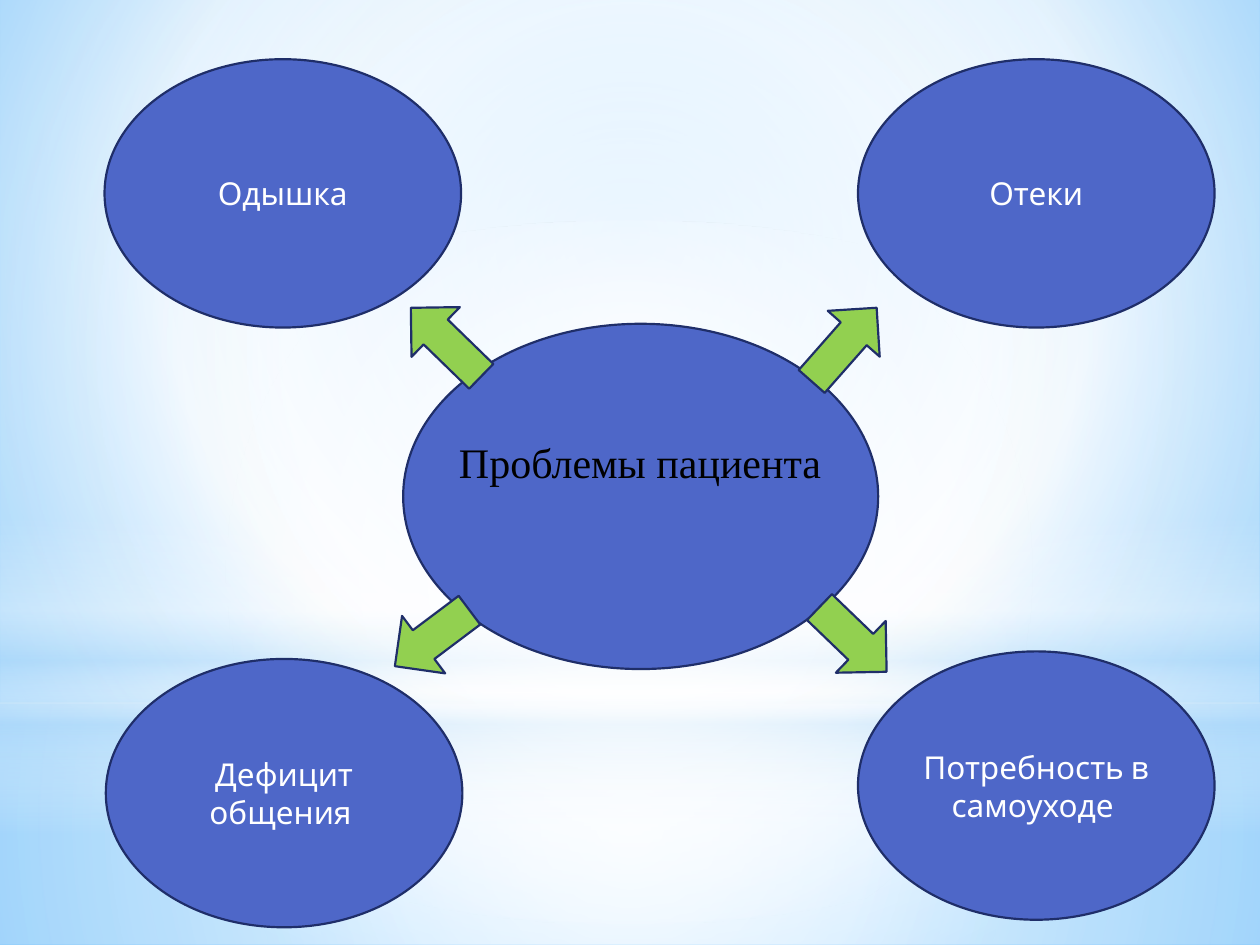
from typing import NamedTuple

from lxml.etree import SubElement
from pptx import Presentation
from pptx.dml.color import RGBColor
from pptx.enum.shapes import MSO_SHAPE
from pptx.enum.text import MSO_ANCHOR, MSO_AUTO_SIZE, PP_ALIGN
from pptx.oxml import parse_xml
from pptx.oxml.ns import nsdecls, qn
from pptx.util import Inches, Pt

COLUMNS, ROWS = 100, 75
BLUE, NAVY, GREEN, WHITE, BLACK = "4E67C8", "1F2E69", "92D050", "FFFFFF", "000000"
PALE_BLUE = "B4DCFA"
PROBLEM_SIZE = (28.3, 21.3)
CENTRE = (50, 50, 50, 50)


class Box(NamedTuple):
    column: float
    row: float
    columns: float
    rows: float


class Stop(NamedTuple):
    position: int
    color: str
    opacity: int = 100


class Gradient(NamedTuple):
    stops: list[Stop]
    focus: tuple | None = None
    angle: int = 90


class Glow(NamedTuple):
    kind: MSO_SHAPE
    box: Box
    gradient: Gradient


class Problem(NamedTuple):
    text: str
    column: float
    row: float


class Arrow(NamedTuple):
    box: Box
    rotation: float


BACKGROUND = Gradient([Stop(0, "9ED5FF"), Stop(60, WHITE), Stop(100, "5BB9FF")], (20, 10, 20, 60))
GLOWS = [
    Glow(MSO_SHAPE.RECTANGLE, Box(0, 55.8, COLUMNS, 19.2), Gradient(
        [Stop(0, WHITE, 91), Stop(37, WHITE, 76), Stop(100, PALE_BLUE, 79)], CENTRE)),
    Glow(MSO_SHAPE.RECTANGLE, Box(0, 0, COLUMNS, 55.8), Gradient(
        [Stop(0, WHITE, 89), Stop(48, WHITE, 62), Stop(100, PALE_BLUE, 79)], CENTRE)),
    Glow(MSO_SHAPE.RECTANGLE, Box(0, 41.2, COLUMNS, 25), Gradient(
        [Stop(0, WHITE, 0), Stop(29, WHITE, 30), Stop(45, PALE_BLUE, 40),
         Stop(55, WHITE, 26), Stop(65, PALE_BLUE, 60), Stop(100, WHITE, 0)])),
    Glow(MSO_SHAPE.OVAL, Box(0, 17.5, COLUMNS, 55.8), Gradient(
        [Stop(0, WHITE), Stop(56, WHITE, 0)], CENTRE)),
]
PROBLEMS = [
    Problem("Дефицит общения ", 8.4, 52.3),
    Problem("Одышка", 8.3, 4.7),
    Problem("Отеки", 68.1, 4.7),
    Problem("Потребность в самоуходе ", 68.1, 51.7),
]
HUB = Box(32, 25.7, 37.7, 27.4)
HEADING = Box(35.4, 33.9, 30.8, 9.4)
ARROWS = [
    Arrow(Box(31.5, 24.4, 7.8, 5.5), 224.2),
    Arrow(Box(63.1, 24.6, 7.8, 5.5), 311.4),
    Arrow(Box(30.6, 47.8, 7.4, 5.7), 143.1),
    Arrow(Box(64, 47.9, 7.4, 5.7), 43.9),
]


def rgb(color: str) -> RGBColor:
    return RGBColor.from_string(color)


def apply(target, formats: dict) -> None:
    for name, value in formats.items():
        setattr(target, name, value)


def gradient_xml(gradient: Gradient):
    fill = parse_xml(f'<a:gradFill {nsdecls("a")} rotWithShape="1"><a:gsLst/></a:gradFill>')
    for stop in gradient.stops:
        mark = SubElement(fill[0], qn("a:gs"), pos=str(stop.position * 1000))
        color = SubElement(mark, qn("a:srgbClr"), val=stop.color)
        if stop.opacity < 100:
            SubElement(color, qn("a:alpha"), val=str(stop.opacity * 1000))
    if gradient.focus:
        path = SubElement(fill, qn("a:path"), {"path": "circle"})
        sides = {side: str(inset * 1000) for side, inset in zip("ltrb", gradient.focus)}
        SubElement(path, qn("a:fillToRect"), sides)
    else:
        SubElement(fill, qn("a:lin"), ang=str(gradient.angle * 60000), scaled="0")
    return fill


def set_gradient(owner, element, gradient: Gradient) -> None:
    owner.fill.solid()
    solid = element.xpath(".//a:solidFill")[0]
    solid.getparent().replace(solid, gradient_xml(gradient))


def place(box: Box, presentation) -> dict:
    column = presentation.slide_width / COLUMNS
    row = presentation.slide_height / ROWS
    return {"left": round(box.column * column), "top": round(box.row * row),
            "width": round(box.columns * column), "height": round(box.rows * row)}


def add_plain(presentation, slide, kind: MSO_SHAPE, box: Box):
    shape = slide.shapes.add_shape(kind, **place(box, presentation))
    shape.shadow.inherit = False
    return shape


def add_glow(presentation, slide, glow: Glow) -> None:
    shape = add_plain(presentation, slide, glow.kind, glow.box)
    shape.line.fill.background()
    set_gradient(shape, shape._element, glow.gradient)


def add_outlined(presentation, slide, kind: MSO_SHAPE, box: Box, color: str):
    shape = add_plain(presentation, slide, kind, box)
    shape.fill.solid()
    shape.fill.fore_color.rgb = rgb(color)
    shape.line.color.rgb = rgb(NAVY)
    shape.line.width = Pt(1.25)
    return shape


def write(shape, text: str, frame: dict, paragraph_formats: dict, font: dict, color: str) -> None:
    apply(shape.text_frame, frame)
    paragraph = shape.text_frame.paragraphs[0]
    run = paragraph.add_run()
    run.text = text
    apply(paragraph, paragraph_formats)
    apply(run.font, font)
    run.font.color.rgb = rgb(color)


def add_problem(presentation, slide, problem: Problem) -> None:
    box = Box(problem.column, problem.row, *PROBLEM_SIZE)
    shape = add_outlined(presentation, slide, MSO_SHAPE.OVAL, box, BLUE)
    write(shape, problem.text,
          {"vertical_anchor": MSO_ANCHOR.MIDDLE, "word_wrap": True},
          {"alignment": PP_ALIGN.CENTER},
          {"name": "Cabin", "size": Pt(18)}, WHITE)


def add_heading(presentation, slide, text: str) -> None:
    title = slide.shapes.title
    apply(title, place(HEADING, presentation))
    write(title, text,
          {"vertical_anchor": MSO_ANCHOR.TOP, "word_wrap": True,
           "auto_size": MSO_AUTO_SIZE.SHAPE_TO_FIT_TEXT},
          {"alignment": PP_ALIGN.CENTER, "line_spacing": 1.07},
          {"name": "Times New Roman", "size": Pt(24)}, BLACK)
    slide.shapes._spTree.append(title._element)


def add_arrow(presentation, slide, arrow: Arrow) -> None:
    shape = add_outlined(presentation, slide, MSO_SHAPE.RIGHT_ARROW, arrow.box, GREEN)
    shape.rotation = arrow.rotation


def main() -> None:
    presentation = Presentation()
    apply(presentation, {"slide_width": Inches(10), "slide_height": Inches(7.5)})
    slide = presentation.slides.add_slide(presentation.slide_layouts[5])
    set_gradient(slide.background, slide._element, BACKGROUND)
    for glow in GLOWS:
        add_glow(presentation, slide, glow)
    for problem in PROBLEMS:
        add_problem(presentation, slide, problem)
    add_outlined(presentation, slide, MSO_SHAPE.OVAL, HUB, BLUE)
    add_heading(presentation, slide, "Проблемы пациента")
    for arrow in ARROWS:
        add_arrow(presentation, slide, arrow)
    presentation.save("out.pptx")


if __name__ == "__main__":
    main()
